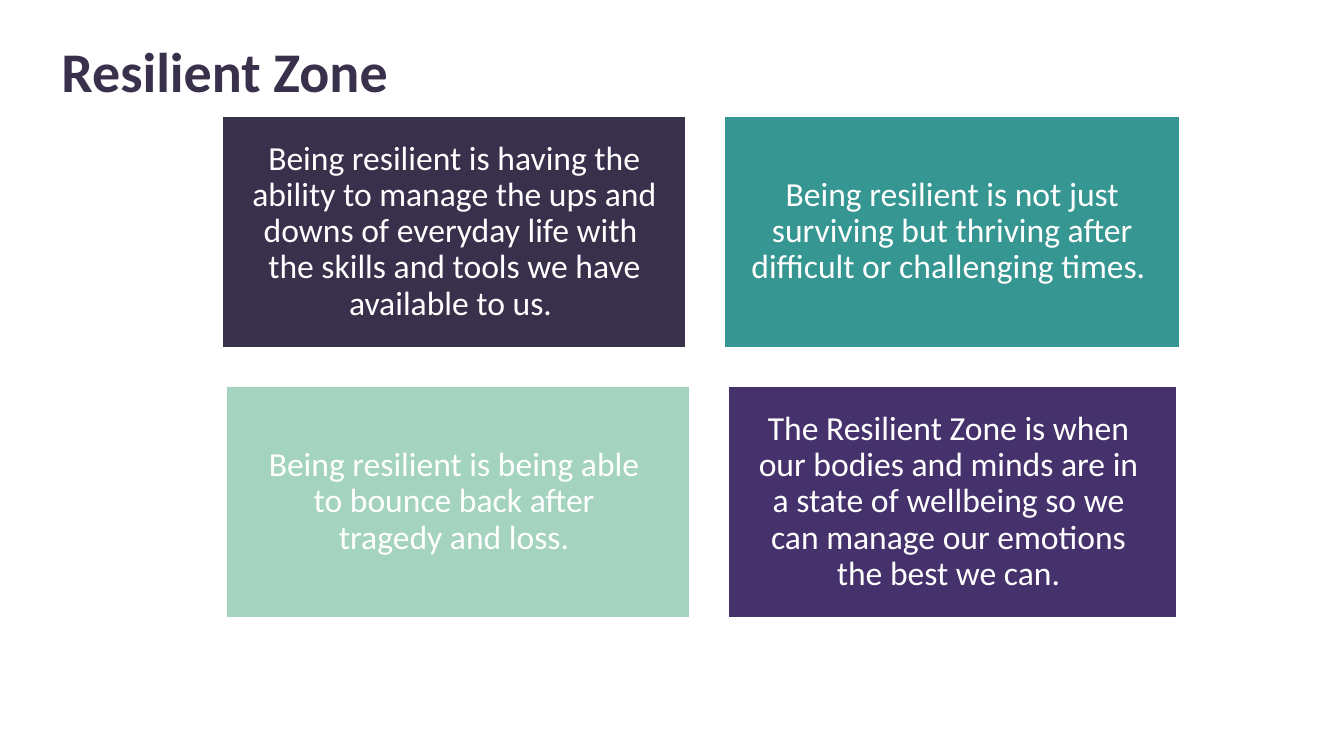
from dataclasses import dataclass

from pptx import Presentation
from pptx.dml.color import RGBColor as RGB
from pptx.enum.shapes import MSO_SHAPE as Shape
from pptx.enum.text import MSO_ANCHOR as Anchor, PP_ALIGN as Align
from pptx.util import Cm, Pt


@dataclass(frozen=True)
class Theme:
    font: str = "Calibri"
    title: int = 40
    body: int = 24
    dark: str = "39304C"
    teal: str = "369691"
    mint: str = "A4D3BF"
    plum: str = "45326C"
    white: str = "FFFFFF"


THEME = Theme()

# Rows of cards: width in cm, fill, text (\v breaks a line)
ROWS = [
    [
        (11.68, THEME.dark, "Being resilient is having the ability to manage the ups and "
         "downs of everyday life with \vthe skills and tools we have available to us. "),
        (11.48, THEME.teal, "Being resilient is not just surviving but thriving after "
         "difficult or challenging times. "),
    ],
    [
        (11.68, THEME.mint, "Being resilient is being able \vto bounce back after "
         "\vtragedy and loss. "),
        (11.3, THEME.plum, "The Resilient Zone is when \vour bodies and minds are in "
         "\va state of wellbeing so we \vcan manage our emotions \vthe best we can. "),
    ],
]


def write(frame, text, size, color, align, bold=False):
    """Fill a text frame with one styled paragraph."""
    frame.word_wrap = True
    frame.vertical_anchor = Anchor.MIDDLE
    frame.text = text
    para = frame.paragraphs[0]
    para.alignment = align
    para.line_spacing = 0.9
    for run in para.runs:
        font = run.font
        font.name, font.size, font.bold = THEME.font, Pt(size), bold
        font.color.rgb = RGB.from_string(color)


def add_title(slide, text, left, top, width, height):
    box = slide.shapes.add_textbox(Cm(left), Cm(top), Cm(width), Cm(height))
    write(box.text_frame, text, THEME.title, THEME.dark, Align.LEFT, bold=True)


def add_card(slide, text, fill, left, top, width, height):
    card = slide.shapes.add_shape(
        Shape.RECTANGLE, Cm(left), Cm(top), Cm(width), Cm(height))
    card.shadow.inherit = False
    card.fill.solid()
    card.fill.fore_color.rgb = RGB.from_string(fill)
    card.line.color.rgb = RGB.from_string(THEME.white)
    card.line.width = Pt(1)
    frame = card.text_frame
    frame.margin_left = frame.margin_right = Cm(0.25)
    frame.margin_top = frame.margin_bottom = Cm(0.25)
    write(frame, text, THEME.body, THEME.white, Align.CENTER)


def add_cards(slide, rows, left, top, width, height, gap=0.97):
    """Stack rows of equal height, each centred in the box."""
    tall = (height - gap * (len(rows) - 1)) / len(rows)
    for i, row in enumerate(rows):
        span = sum(wide for wide, _, _ in row) + gap * (len(row) - 1)
        x = left + (width - span) / 2
        y = top + i * (tall + gap)
        for wide, fill, text in row:
            add_card(slide, text, fill, x, y, wide, tall)
            x += wide + gap


def main():
    deck = Presentation()
    deck.slide_width, deck.slide_height = Cm(33.87), Cm(19.05)
    slide = deck.slides.add_slide(deck.slide_layouts[6])
    add_title(slide, "Resilient Zone", 1.3, 1.02, 29.21, 1.73)
    add_cards(slide, ROWS, 5.61, 2.92, 24.13, 12.65)
    deck.save("out.pptx")


if __name__ == "__main__":
    main()
